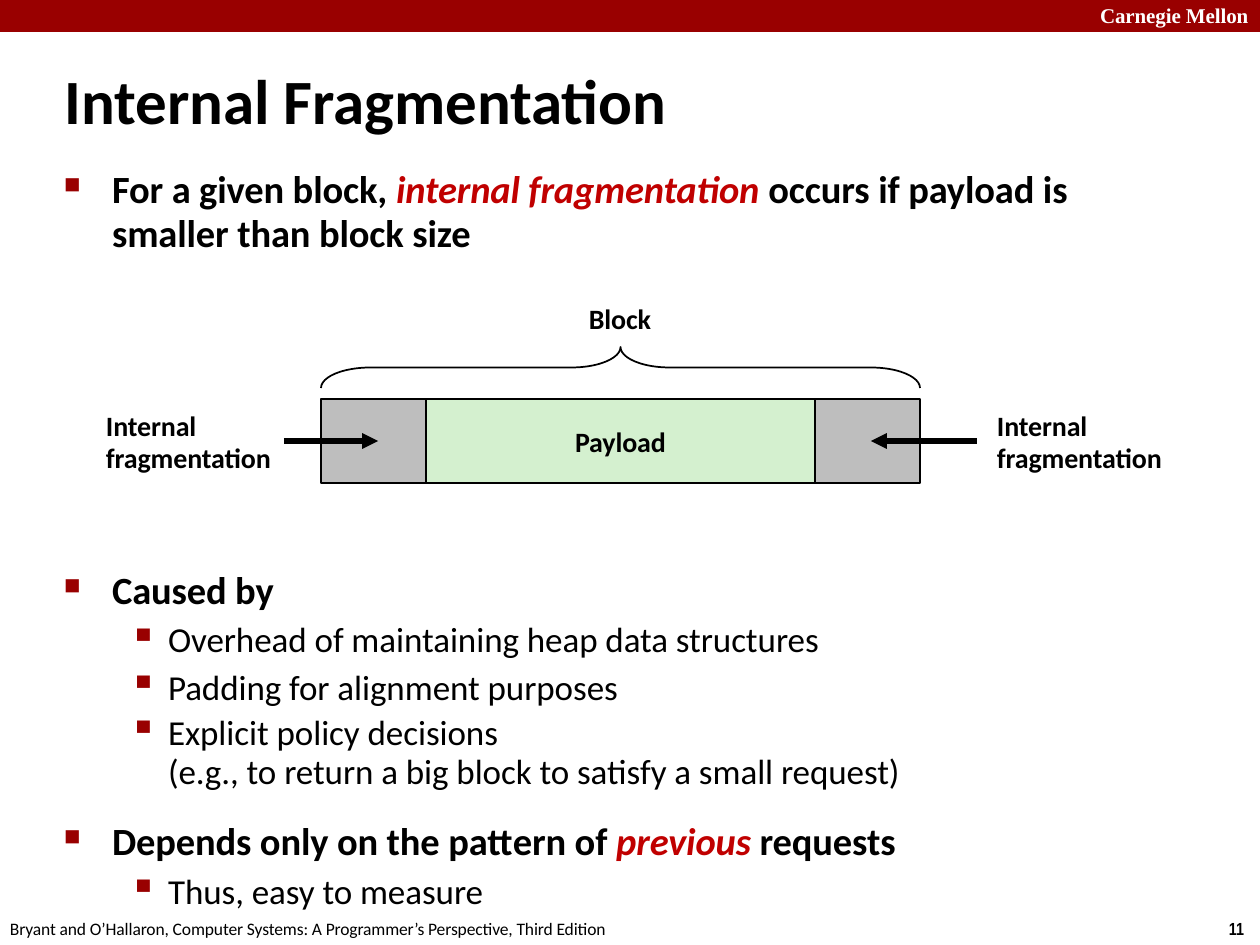
from lxml import etree
from pptx import Presentation, util as u
from pptx.dml.color import RGBColor
from pptx.enum import shapes, text
from pptx.oxml import ns

EMU_PER_PX = 914400 / 126
BLACK, WHITE, RED, ACCENT = "000000", "FFFFFF", "990000", "C00000"
GRAY, GREEN = "BEBEBE", "D4F0CF"
BAR_TOP, BAR_HEIGHT = 399, 84
LEVELS = {
    1: dict(char="■", pct=59, margin=49, indent=-48, size=22, bold=True),
    2: dict(char="▪", pct=110, margin=105, indent=-39, size=20, bold=False),
}


def px(n):
    """Turn pixels into EMU."""
    return u.Emu(round(n * EMU_PER_PX))


def rgb(value):
    """Turn a hex string into a colour."""
    return RGBColor.from_string(value)


def add_run(p, words, color=BLACK, font="Calibri", **formats):
    """Append a run with the given font values."""
    r = p.add_run()
    r.text = words
    r.font.name = font
    r.font.color.rgb = rgb(color)
    for name, value in formats.items():
        setattr(r.font, name, u.Pt(value) if name == "size" else value)
    r._r.get_or_add_rPr().set("spc", "-5")


def text_frame(s, left, top, width, height):
    """Add a text box without margins and return its frame."""
    tf = s.shapes.add_textbox(*map(px, (left, top, width, height))).text_frame
    tf.word_wrap = True
    for side in ("left", "top", "right", "bottom"):
        setattr(tf, f"margin_{side}", 0)
    return tf


def label(s, box, words, align=text.PP_ALIGN.LEFT, spacing=None, **formats):
    """Add a one-paragraph text box."""
    p = text_frame(s, *box).paragraphs[0]
    p.alignment = align
    if spacing:
        p.line_spacing = u.Pt(spacing)
    add_run(p, words, **formats)


def set_bullet(p, level, marked):
    """Indent a paragraph and give it a bullet if marked."""
    pPr = p._p.get_or_add_pPr()
    pPr.set("marL", str(px(level["margin"])))
    if not marked:
        pPr.set("indent", "0")
        return
    pPr.set("indent", str(px(level["indent"])))
    color = etree.SubElement(pPr, ns.qn("a:buClr"))
    etree.SubElement(color, ns.qn("a:srgbClr"), val=RED)
    etree.SubElement(pPr, ns.qn("a:buSzPct"), val=str(level["pct"] * 1000))
    etree.SubElement(pPr, ns.qn("a:buChar"), char=level["char"])


def bullets(s, box, items):
    """Add a list of (level, marked, before, spacing, words); asterisks mark emphasis."""
    tf = text_frame(s, *box)
    for i, (depth, marked, before, spacing, words) in enumerate(items):
        p = tf.add_paragraph() if i else tf.paragraphs[0]
        level = LEVELS[depth]
        p.space_before = u.Pt(before)
        if spacing:
            p.line_spacing = u.Pt(spacing)
        set_bullet(p, level, marked)
        for j, part in enumerate(words.split("*")):
            emphasis = j % 2 == 1
            add_run(p, part, ACCENT if emphasis else BLACK, size=level["size"],
                    bold=level["bold"], italic=emphasis)


def preset(s, kind, box, fill=None, line=None):
    """Add a preset shape with optional fill and line."""
    sp = s.shapes.add_shape(kind, *map(px, box))
    sp.shadow.inherit = False
    if fill:
        sp.fill.solid()
        sp.fill.fore_color.rgb = rgb(fill)
    else:
        sp.fill.background()
    if line:
        sp.line.color.rgb = rgb(line)
        sp.line.width = u.Pt(1)
    else:
        sp.line.fill.background()
    return sp


def arrow(s, start, end, y):
    """Add a thick horizontal arrow."""
    c = s.shapes.add_connector(shapes.MSO_CONNECTOR.STRAIGHT, px(start), px(y), px(end), px(y))
    c.line.color.rgb = rgb(BLACK)
    c.line.width = u.Pt(3)
    etree.SubElement(c.line._get_or_add_ln(), ns.qn("a:tailEnd"), type="triangle")
    etree.SubElement(c._element.spPr, ns.qn("a:effectLst"))


def brace(s, left, top, width, height):
    """Add a brace that opens downwards over the given box."""
    shift = (width - height) / 2
    sp = preset(s, shapes.MSO_SHAPE.LEFT_BRACE,
                (left + shift, top - shift, height, width), line=BLACK)
    sp.rotation = 90
    sp.adjustments[0] = 1.2


def block_diagram(s):
    """Draw the block with its payload and unused ends."""
    rect = shapes.MSO_SHAPE.RECTANGLE
    for left, width, fill in ((321, 105, GRAY), (815, 105, GRAY), (426, 389, GREEN)):
        sp = preset(s, rect, (left, BAR_TOP, width, BAR_HEIGHT), fill, BLACK)
    p = sp.text_frame.paragraphs[0]
    p.alignment = text.PP_ALIGN.CENTER
    add_run(p, "Payload", size=16, bold=True)
    brace(s, 321, 347, 599, 41)
    label(s, (520, 302, 200, 34), "Block", text.PP_ALIGN.CENTER, size=16, bold=True)
    for left, start, end in ((106, 284, 378), (997, 977, 871)):
        label(s, (left, 409, 175, 66), "Internal fragmentation", spacing=18.7,
              size=16, bold=True)
        arrow(s, start, end, BAR_TOP + BAR_HEIGHT // 2)


def main():
    """Build the slide and save it."""
    prs = Presentation()
    prs.slide_width, prs.slide_height = px(1260), px(945)
    s = prs.slides.add_slide(prs.slide_layouts[6])
    preset(s, shapes.MSO_SHAPE.RECTANGLE, (0, 0, 1260, 32), RED)
    label(s, (1100, 3, 158, 27), "Carnegie Mellon", color=WHITE,
          font="Times New Roman", size=12, bold=True)
    label(s, (65, 62, 800, 78), "Internal Fragmentation", size=36, bold=True)
    bullets(s, (63, 168, 1050, 90), [
        (1, True, 0, 24.9, "For a given block, *internal fragmentation* occurs if payload is"),
        (1, False, 0, 24.9, "smaller than block size"),
    ])
    block_diagram(s)
    bullets(s, (63, 566, 900, 346), [
        (1, True, 0, None, "Caused by"),
        (2, True, 3.2, None, "Overhead of maintaining heap data structures"),
        (2, True, 3.1, None, "Padding for alignment purposes"),
        (2, True, 3.1, 22.6, "Explicit policy decisions"),
        (2, False, 0, 22.6, "(e.g., to return a big block to satisfy a small request)"),
        (1, True, 14.7, None, "Depends only on the pattern of *previous* requests"),
        (2, True, 3.3, None, "Thus, easy to measure"),
    ])
    label(s, (10, 921, 640, 21),
          "Bryant and O’Hallaron, Computer Systems: A Programmer’s Perspective, Third Edition",
          spacing=10.4, size=10)
    label(s, (1229, 918, 25, 22), "11", font="Arial Narrow", size=10, bold=True)
    prs.save("out.pptx")


if __name__ == "__main__":
    main()
